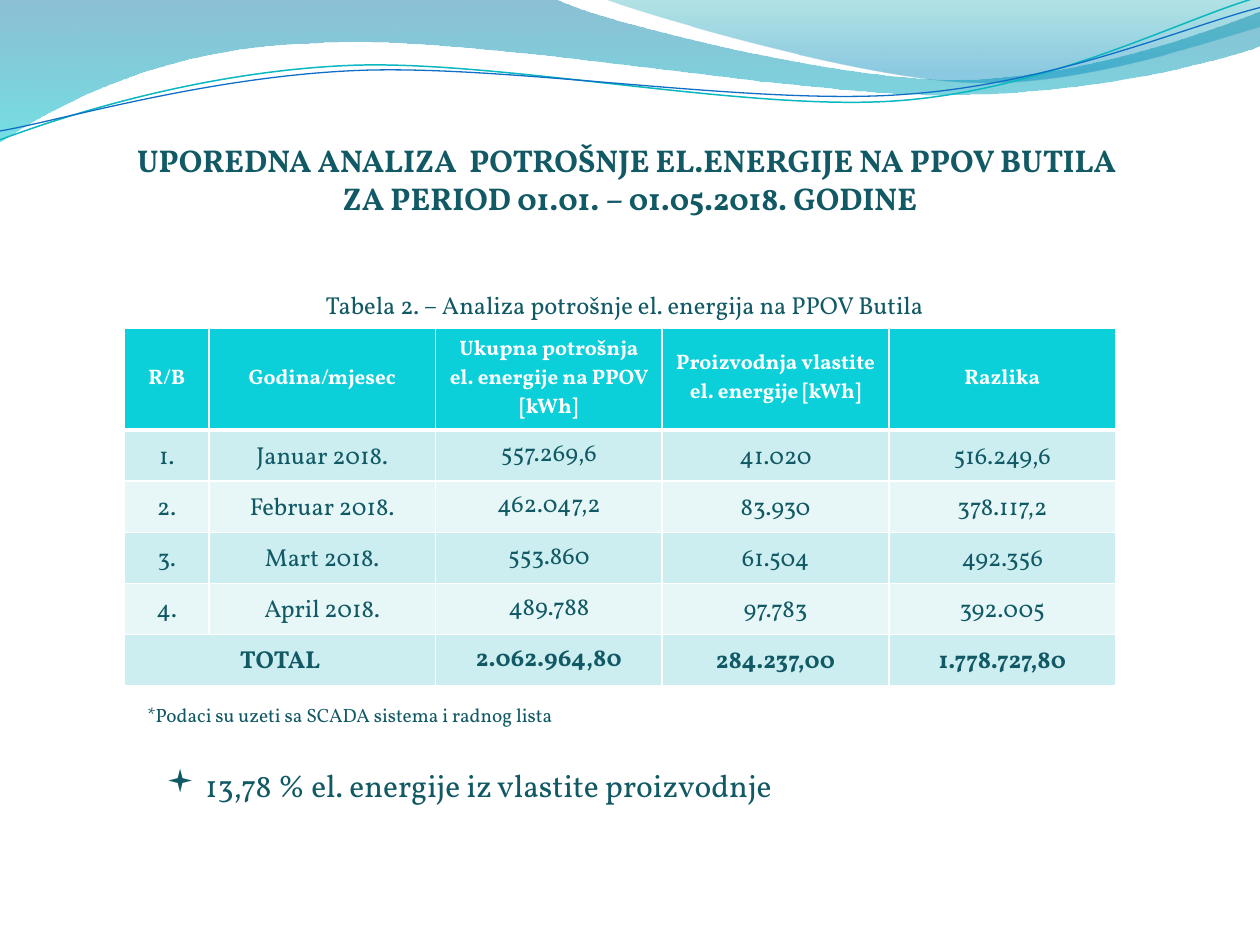
import dataclasses

import lxml.etree
import pptx
import pptx.dml.color
import pptx.enum.text
import pptx.oxml.ns
import pptx.util

Cm = pptx.util.Cm
Pt = pptx.util.Pt
RGB = pptx.dml.color.RGBColor.from_string
qn = pptx.oxml.ns.qn
Align = pptx.enum.text.PP_ALIGN
Anchor = pptx.enum.text.MSO_ANCHOR


@dataclasses.dataclass(frozen=True)
class Theme:
    font: str = "Vollkorn"
    bullet_font: str = "Wingdings"
    ink: str = "115964"
    white: str = "FFFFFF"
    header: str = "0BD0D9"
    bands: tuple = ("CCEEF1", "E7F7F8")
    teal_line: str = "0AB8BF"
    blue_line: str = "0F6FC6"
    back_wave: tuple = (("0074A1", 0, 45), ("00C6CF", 1, 55))
    front_wave: tuple = (("00A1A9", 0, 30), ("008BBF", 0.8, 45))
    title: int = 18
    body: int = 14
    head: int = 12
    note: int = 11


theme = Theme()


def write_text(frame, text, size=theme.body, color=theme.ink, bold=False,
               align=Align.LEFT, spacing=None, bullet=None):
    frame.word_wrap = True
    para = frame.paragraphs[0]
    para.alignment = align
    if spacing:
        para.line_spacing = spacing
    for index, line in enumerate(text.split("\n")):
        if index:
            para.add_line_break()
        span = para.add_run()
        span.text = line
        span.font.name = theme.font
        span.font.size = Pt(size)
        span.font.bold = bold
        span.font.color.rgb = RGB(color)
    if bullet:
        props = para._p.get_or_add_pPr()
        props.set("marL", str(Cm(0.79)))
        props.set("indent", str(-Cm(0.79)))
        lxml.etree.SubElement(props, qn("a:buFont")).set("typeface", theme.bullet_font)
        lxml.etree.SubElement(props, qn("a:buChar")).set("char", bullet)


def draw_wave(shapes, start, segments, closed):
    points = [start]
    for segment in segments:
        points.extend(zip(segment[::2], segment[1::2]))
    corners = [(Cm(x * 2.54), Cm(y * 2.54)) for x, y in points]
    builder = shapes.build_freeform(*corners[0])
    builder.add_line_segments(corners[1:], close=closed)
    wave = builder.convert_to_shape()
    wave.shadow.inherit = False
    steps = iter(list(wave._element.iter(qn("a:lnTo"))))
    for segment in segments:
        first = next(steps)
        if len(segment) == 6:
            first.tag = qn("a:cubicBezTo")
            for extra in (next(steps), next(steps)):
                first.append(extra[0])
                extra.getparent().remove(extra)
    return wave


deck = pptx.Presentation()
deck.slide_width, deck.slide_height = Cm(25.4), Cm(19.05)
page = deck.slides.add_slide(deck.slide_layouts[6])

filled_waves = [
    (theme.back_wave, (0, 0), [
        (4.4, -0.01),
        (4.76, 0.17, 6.64, 0.63, 7.58, 0.63),
        (8.53, 0.63, 9.58, 0.26, 10, 0.09),
        (10.01, 0.36),
        (9.83, 0.44, 8.7, 0.76, 7.46, 0.75),
        (6.22, 0.75, 3.82, 0.28, 2.57, 0.34),
        (1.29, 0.36, 0.46, 0.83, -0.01, 1.13)]),
    (theme.front_wave, (4.79, -0.01), [
        (5.09, 0.11, 6.82, 0.62, 7.69, 0.65),
        (8.56, 0.69, 9.61, 0.32, 10, 0.21),
        (10, 0)]),
]
for stops, start, segments in filled_waves:
    wave = draw_wave(page.shapes, start, segments, True)
    wave.line.fill.background()
    wave.fill.gradient()
    wave.fill.gradient_angle = 270
    for stop, (color, position, opacity) in zip(wave.fill.gradient_stops, stops):
        stop.color.rgb = RGB(color)
        stop.position = position
        tint = stop._gs.find(qn("a:srgbClr"))
        lxml.etree.SubElement(tint, qn("a:alpha")).set("val", str(opacity * 1000))

line_waves = [
    (theme.teal_line, 0.85, (0, 1.11), [
        (0.48, 0.93, 1.58, 0.57, 2.77, 0.52),
        (3.95, 0.47, 5.93, 0.89, 7.13, 0.8),
        (8.33, 0.71, 9.38, 0.15, 9.98, -0.02)]),
    (theme.blue_line, 0.75, (0, 1.04), [
        (0.47, 0.96, 1.64, 0.61, 2.83, 0.56),
        (4.03, 0.51, 5.97, 0.84, 7.17, 0.75),
        (8.36, 0.67, 9.41, 0.21, 10, 0.06)]),
]
for color, width, start, segments in line_waves:
    wave = draw_wave(page.shapes, start, segments, False)
    wave.fill.background()
    wave.line.color.rgb = RGB(color)
    wave.line.width = Pt(width)

title = page.shapes.add_textbox(Cm(1.27), Cm(1.96), Cm(22.86), Cm(3.18)).text_frame
title.margin_left = title.margin_right = title.margin_bottom = 0
title.vertical_anchor = Anchor.MIDDLE
write_text(title, "UPOREDNA ANALIZA  POTROŠNJE EL.ENERGIJE NA PPOV BUTILA \n"
           "ZA PERIOD 01.01. – 01.05.2018. GODINE",
           size=theme.title, bold=True, align=Align.CENTER)

rows = [
    ("R/B", "Godina/mjesec", "Ukupna potrošnja el. energije na PPOV [kWh]",
     "Proizvodnja vlastite el. energije [kWh]", "Razlika"),
    ("1.", "Januar 2018.", "557.269,6", "41.020", "516.249,6"),
    ("2.", "Februar 2018.", "462.047,2", "83.930", "378.117,2"),
    ("3.", "Mart 2018.", "553.860", "61.504", "492.356"),
    ("4.", "April 2018.", "489.788", "97.783", "392.005"),
    ("TOTAL", "", "2.062.964,80", "284.237,00", "1.778.727,80"),
]
last = len(rows) - 1
table = page.shapes.add_table(len(rows), 5, Cm(2.51), Cm(6.61), Cm(19.98), Cm(7.21)).table
for index, column in enumerate(table.columns):
    column.width = Cm(4.57 if index else 1.7)
for index, row in enumerate(table.rows):
    row.height = Cm(1.03 if index else 2.06)
table.cell(last, 0).merge(table.cell(last, 1))

for r, texts in enumerate(rows):
    for c, text in enumerate(texts):
        cell = table.cell(r, c)
        props = cell._tc.get_or_add_tcPr()
        for side in ("lnL", "lnR", "lnT", "lnB"):
            thick = (r, side) in ((0, "lnB"), (1, "lnT"))
            border = lxml.etree.SubElement(props, qn("a:" + side))
            border.set("w", str(Pt(3 if thick else 1)))
            paint = lxml.etree.SubElement(border, qn("a:solidFill"))
            lxml.etree.SubElement(paint, qn("a:srgbClr")).set("val", theme.white)
        cell.fill.solid()
        cell.fill.fore_color.rgb = RGB(theme.bands[(r - 1) % 2] if r else theme.header)
        cell.vertical_anchor = Anchor.MIDDLE
        compact = r > 0 and c != 2
        if compact:
            cell.margin_left = cell.margin_right = Cm(0.18)
            cell.margin_top = cell.margin_bottom = 0
        if text:
            write_text(cell.text_frame, text, size=theme.body if r else theme.head,
                       color=theme.ink if r else theme.white, bold=r in (0, last),
                       align=Align.CENTER, spacing=1.15 if compact else None)

labels = [
    ("Tabela 2. – Analiza potrošnje el. energija na PPOV Butila",
     (2.69, 5.72, 19.81, 0.86), dict(align=Align.CENTER)),
    ("13,78 % el. energije iz vlastite proizvodnje",
     (3.1, 15.32, 16.41, 1.02), dict(size=theme.title, bullet="▪")),
    ("*Podaci su uzeti sa SCADA sistema i radnog lista",
     (2.72, 14.05, 19.79, 0.74), dict(size=theme.note)),
]
for text, bounds, style in labels:
    box = page.shapes.add_textbox(*map(Cm, bounds))
    write_text(box.text_frame, text, **style)

deck.save("out.pptx")
